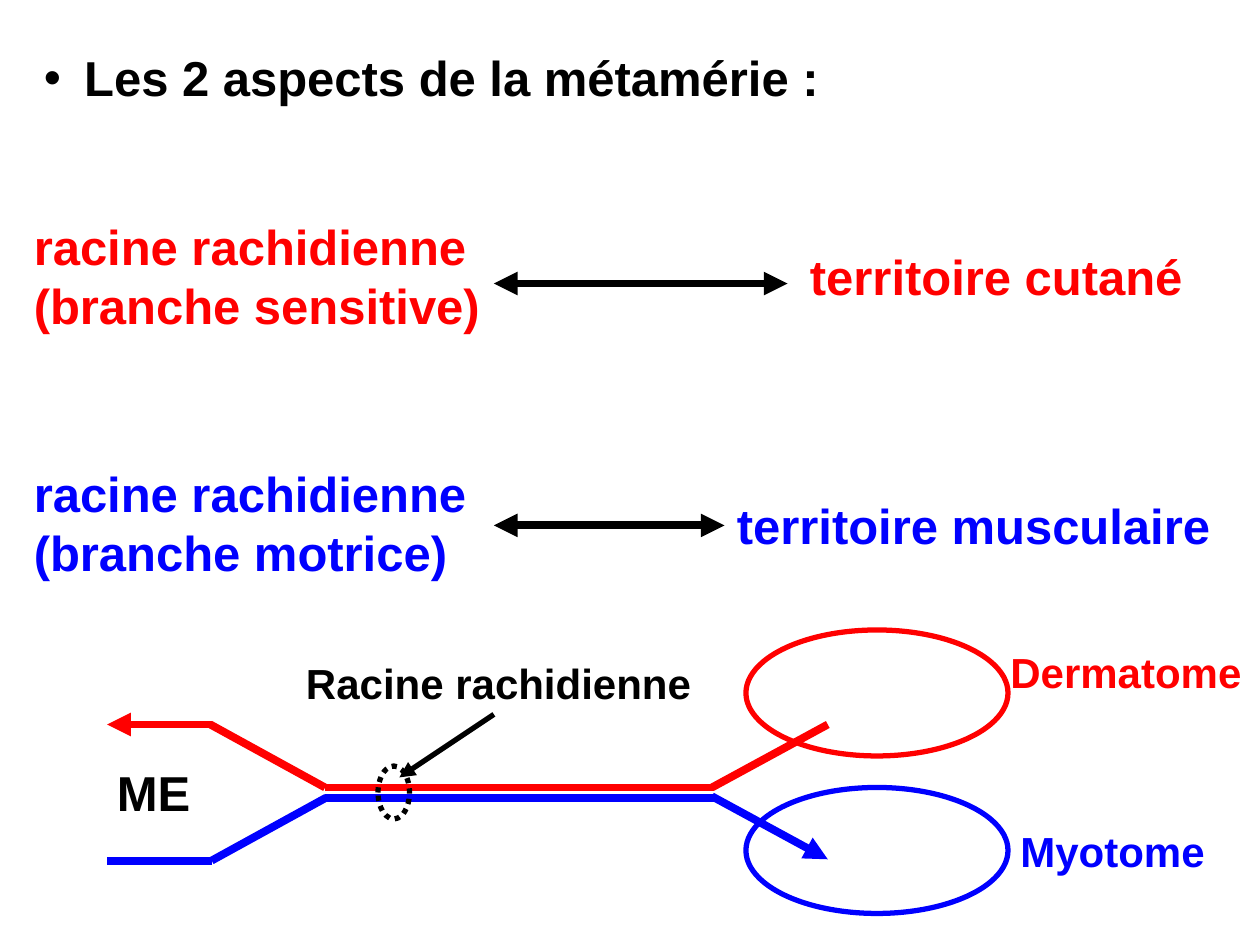
from dataclasses import dataclass

from lxml.etree import Element, SubElement
from pptx import Presentation
from pptx.dml.color import RGBColor
from pptx.enum.dml import MSO_LINE
from pptx.enum.shapes import MSO_CONNECTOR, MSO_SHAPE
from pptx.enum.text import PP_ALIGN
from pptx.oxml.ns import qn
from pptx.util import Inches, Pt

BLACK, SENSORY, MOTOR = "000000", "FF0000", "0000FF"


@dataclass
class Label:
    text: str
    left: float
    top: float
    width: float
    height: float
    color: str = BLACK
    size: int = 28
    wrap: bool = True
    bullet: bool = False


@dataclass
class Line:
    start: tuple[float, float]
    end: tuple[float, float]
    color: str = BLACK
    weight: float = 4.5
    head: bool = False
    tail: bool = False


@dataclass
class Oval:
    left: float
    top: float
    width: float
    height: float
    color: str
    dotted: bool = False


def rgb(color: str) -> RGBColor:
    return RGBColor.from_string(color)


def add_label(slide, label: Label) -> None:
    box = slide.shapes.add_textbox(Inches(label.left), Inches(label.top),
                                   Inches(label.width), Inches(label.height))
    box.text_frame.word_wrap = label.wrap
    paragraph = box.text_frame.paragraphs[0]
    if label.bullet:
        properties = paragraph._p.get_or_add_pPr()
        properties.set("marL", str(Inches(0.32)))
        properties.set("indent", str(-Inches(0.32)))
        SubElement(properties, qn("a:buFont"), typeface="Arial")
        SubElement(properties, qn("a:buChar"), char="•")
        paragraph.alignment = PP_ALIGN.JUSTIFY
    run = paragraph.add_run()
    run.text = label.text
    run.font.name = "Arial"
    run.font.size = Pt(label.size)
    run.font.bold = True
    run.font.color.rgb = rgb(label.color)


def add_line(slide, line: Line) -> None:
    points = [Inches(value) for value in (*line.start, *line.end)]
    connector = slide.shapes.add_connector(MSO_CONNECTOR.STRAIGHT, *points)
    connector.line.color.rgb = rgb(line.color)
    connector.line.width = Pt(line.weight)
    outline = connector.line._get_or_add_ln()
    for tag, wanted in (("a:headEnd", line.head), ("a:tailEnd", line.tail)):
        if wanted:
            SubElement(outline, qn(tag), type="triangle")
    outline.addnext(Element(qn("a:effectLst")))


def add_oval(slide, oval: Oval) -> None:
    shape = slide.shapes.add_shape(MSO_SHAPE.OVAL, Inches(oval.left), Inches(oval.top),
                                   Inches(oval.width), Inches(oval.height))
    shape.shadow.inherit = False
    shape.fill.background()
    shape.line.color.rgb = rgb(oval.color)
    shape.line.width = Pt(3)
    if oval.dotted:
        shape.line.dash_style = MSO_LINE.ROUND_DOT


LABELS = [
    Label("Les 2 aspects de la métamérie :", 0.25, 0.33, 9.5, 0.57, bullet=True),
    # Root and territory pairs
    Label("racine rachidienne (branche sensitive)", 0.17, 1.67, 3.83, 1.03, SENSORY),
    Label("territoire cutané", 6.33, 1.91, 3.17, 0.57, SENSORY, wrap=False),
    Label("racine rachidienne (branche motrice)", 0.17, 3.63, 3.83, 1.03, MOTOR),
    Label("territoire musculaire", 5.75, 3.88, 4.17, 0.57, MOTOR),
    # Diagram labels
    Label("ME", 0.83, 6, 1, 0.57),
    Label("Racine rachidienne", 2.33, 5.17, 3.42, 0.5, size=24),
    Label("Dermatome", 7.92, 5.08, 2.08, 0.5, SENSORY, 24),
    Label("Myotome", 8, 6.5, 1.67, 0.5, MOTOR, 24),
]

OVALS = [
    Oval(5.92, 5, 2.08, 1, SENSORY),
    Oval(5.92, 6.25, 2.08, 1, MOTOR),
    Oval(3, 6.08, 0.25, 0.42, BLACK, dotted=True),
]

LINES = [
    # Sensory fibre, towards the spinal cord
    Line((2.58, 6.25), (5.67, 6.25), SENSORY),
    Line((5.65, 6.25), (6.57, 5.75), SENSORY),
    Line((2.58, 6.25), (1.67, 5.75), SENSORY),
    Line((0.85, 5.75), (1.68, 5.75), SENSORY, head=True),
    # Motor fibre, towards the muscle
    Line((2.58, 6.33), (5.67, 6.33), MOTOR),
    Line((5.65, 6.32), (6.57, 6.82), MOTOR, tail=True),
    Line((1.68, 6.83), (2.59, 6.33), MOTOR),
    Line((0.85, 6.83), (1.68, 6.83), MOTOR),
    # Pointer to the spinal root
    Line((3.92, 5.67), (3.17, 6.17), weight=3, tail=True),
    # Links between root and territory
    Line((3.92, 2.25), (6.25, 2.25), head=True, tail=True),
    Line((3.92, 4.17), (5.75, 4.17), head=True, tail=True),
]


def main() -> None:
    presentation = Presentation()
    presentation.slide_width = Inches(10)
    presentation.slide_height = Inches(7.5)
    slide = presentation.slides.add_slide(presentation.slide_layouts[6])
    for line in LINES:
        add_line(slide, line)
    for oval in OVALS:
        add_oval(slide, oval)
    for label in LABELS:
        add_label(slide, label)
    presentation.save("out.pptx")


if __name__ == "__main__":
    main()
